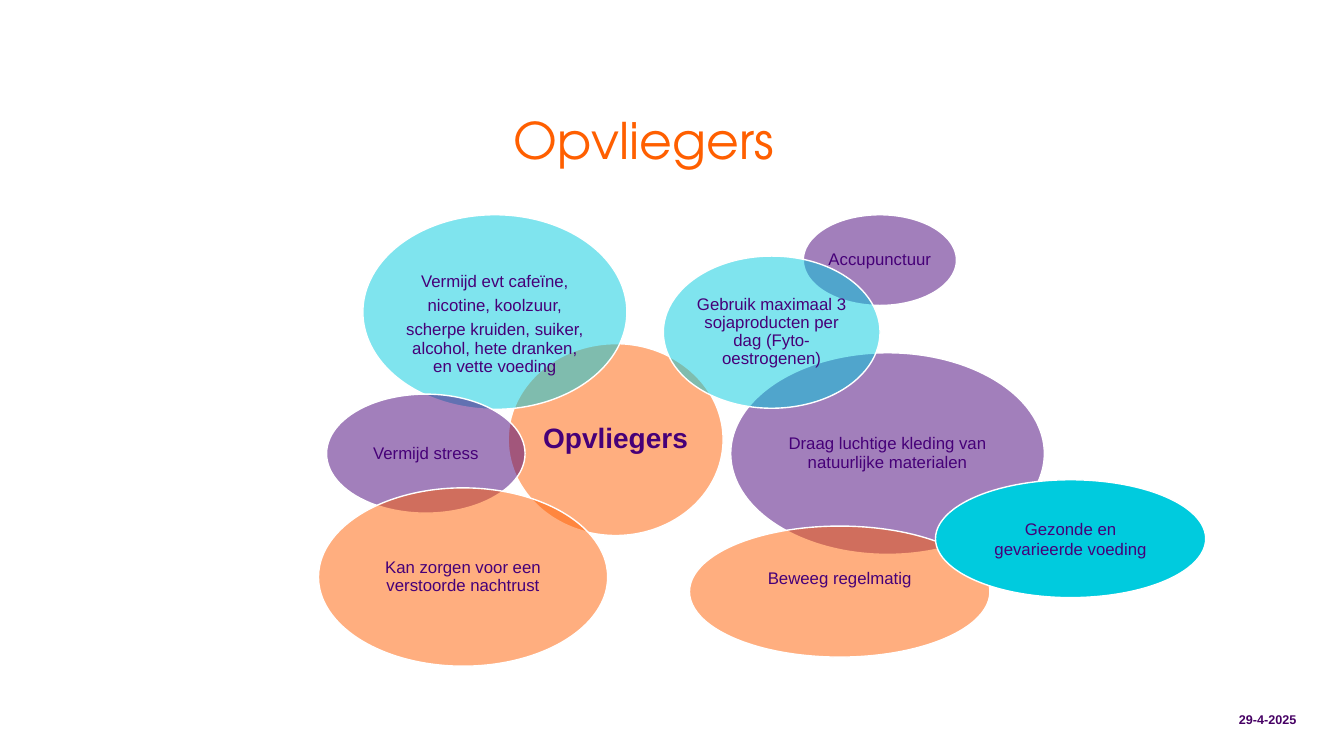
from dataclasses import dataclass

from lxml.etree import SubElement
from pptx import Presentation
from pptx.dml.color import RGBColor
from pptx.enum.shapes import MSO_SHAPE as Preset
from pptx.enum.text import MSO_ANCHOR as Anchor, PP_ALIGN as Align
from pptx.oxml.ns import qn
from pptx.util import Pt


@dataclass(frozen=True)
class Theme:
    orange: str = "FF5F00"
    purple: str = "460078"
    cyan: str = "00CBDE"
    white: str = "FFFFFF"
    date_colour: str = "460064"
    body_font: str = "Arial"
    title_font: str = "TeX Gyre Adventor"
    title_size: int = 36
    centre_size: int = 20
    body_size: int = 12
    date_size: int = 9


theme = Theme()


def write(box, lines, size, colour=theme.purple, font=theme.body_font, bold=False,
          align=Align.CENTER, anchor=Anchor.MIDDLE, spacing=0.9, after=0):
    """Fill the text frame of a box with one paragraph per line."""
    frame = box.text_frame
    frame.word_wrap = True
    frame.vertical_anchor = anchor
    frame.text = "\n".join(lines)
    for para in frame.paragraphs:
        para.alignment = align
        para.line_spacing = spacing
        para.space_after = Pt(after)
        para.font.name = font
        para.font.size = Pt(size)
        para.font.bold = bold
        para.font.color.rgb = RGBColor.from_string(colour)


def add_bubble(place, colour, opacity):
    bubble = page.shapes.add_shape(Preset.OVAL, *map(Pt, place))
    bubble.shadow.inherit = False
    bubble.fill.solid()
    bubble.fill.fore_color.rgb = RGBColor.from_string(colour)
    bubble.line.color.rgb = RGBColor.from_string(theme.white)
    bubble.line.width = Pt(1)
    if opacity < 100:
        tint = bubble._element.spPr.find(qn("a:solidFill"))[0]
        SubElement(tint, qn("a:alpha"), val=str(opacity * 1000))
    return bubble


deck = Presentation()
deck.slide_width, deck.slide_height = Pt(960), Pt(540)
page = deck.slides.add_slide(deck.slide_layouts[6])

date = page.shapes.add_textbox(Pt(841.7), Pt(499.7), Pt(91.4), Pt(28.8))
write(date, ["29-4-2025"], theme.date_size, theme.date_colour, bold=True,
      align=Align.RIGHT, spacing=1.0)

title = page.shapes.add_textbox(Pt(78.5), Pt(79.2), Pt(763.2), Pt(53.3))
write(title, ["Opvliegers"], theme.title_size, theme.orange, theme.title_font,
      anchor=Anchor.TOP)

centre = add_bubble((363, 245.5, 153.5, 137), theme.orange, 50)
write(centre, ["Opvliegers"], theme.centre_size, bold=True)
centre.text_frame.margin_left = centre.text_frame.margin_right = Pt(2)

# Place, colour, extra margin above and below the text, lines
tips = [
    ((522, 252, 224, 144), theme.purple, 0, 0,
     ["Draag luchtige kleding van natuurlijke materialen"]),
    ((259.2, 153.4, 188.6, 139), theme.cyan, 18, 0,
     ["Vermijd evt cafeïne,", "nicotine, koolzuur,",
      "scherpe kruiden, suiker, alcohol, hete dranken, en vette voeding"]),
    ((492.5, 375.8, 214.6, 93.6), theme.orange, 0, 18, ["Beweeg regelmatig"]),
    ((233.3, 281.5, 141.8, 85), theme.purple, 0, 0, ["Vermijd stress"]),
    ((227.5, 348.5, 206.6, 127.4), theme.orange, 0, 0,
     ["Kan zorgen voor een verstoorde nachtrust"]),
    ((573.8, 153.4, 109.4, 64.8), theme.purple, 0, 0, ["Accupunctuur"]),
    ((473.8, 182.9, 154.8, 108.7), theme.cyan, 0, 0,
     ["Gebruik maximaal 3 sojaproducten per dag (Fyto-oestrogenen)"]),
]
for place, colour, above, below, lines in tips:
    tip = add_bubble(place, colour, 50)
    write(tip, lines, theme.body_size, after=4.2)
    frame = tip.text_frame
    frame.margin_left = frame.margin_right = Pt(1.2)
    frame.margin_top, frame.margin_bottom = Pt(1.2 + above), Pt(1.2 + below)

food = add_bubble((668.2, 342.7, 193, 84.2), theme.cyan, 100)
write(food, ["Gezonde en gevarieerde voeding"], theme.body_size, spacing=1.0)

deck.save("out.pptx")
